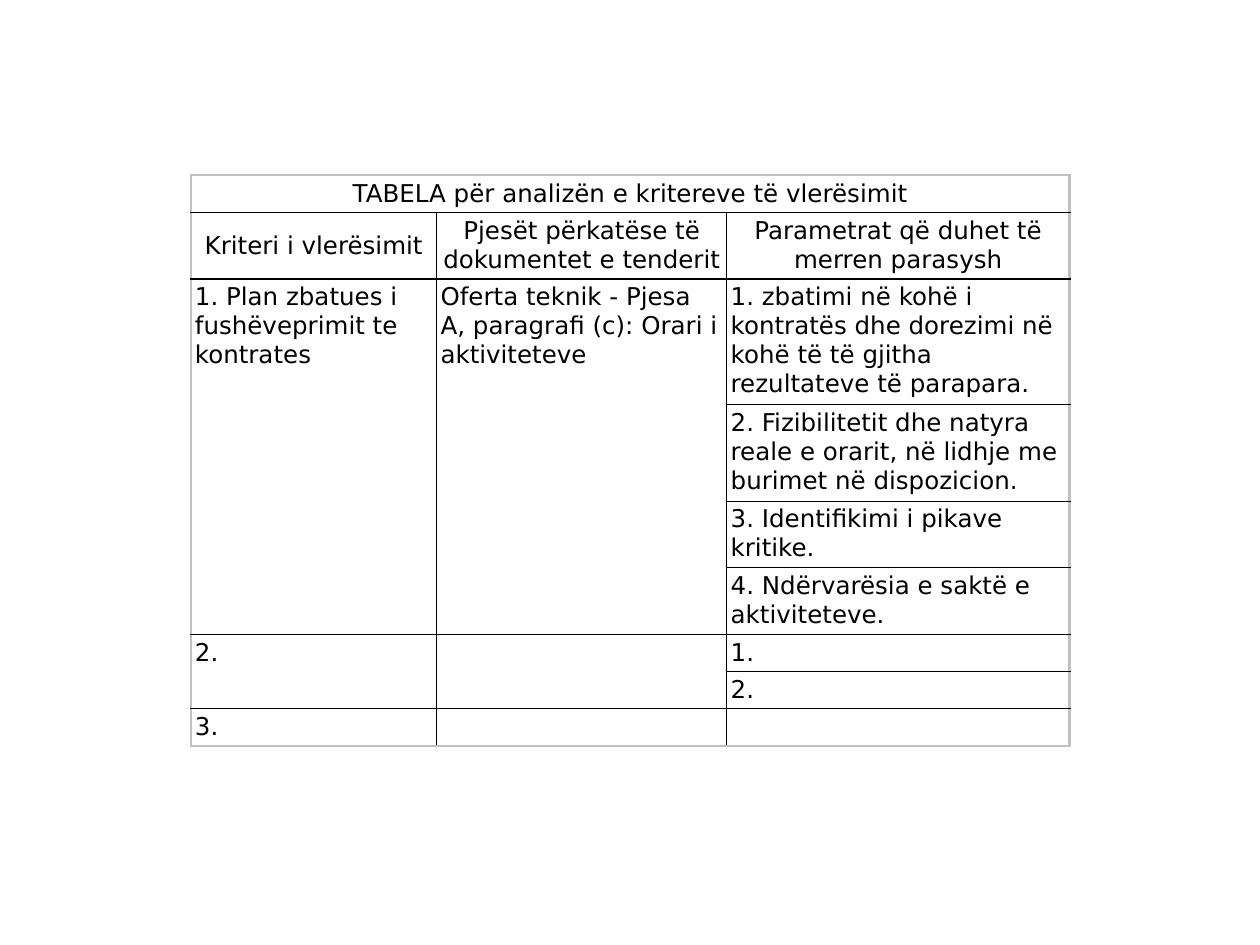
import pptx
import pptx.util
import pptx.dml.color
import pptx.enum.text
import lxml.etree

Pt = pptx.util.Pt
ALIGN = pptx.enum.text.PP_ALIGN
ANCHOR = pptx.enum.text.MSO_ANCHOR
BLACK = pptx.dml.color.RGBColor(0x00, 0x00, 0x00)
WHITE = pptx.dml.color.RGBColor(0xFF, 0xFF, 0xFF)
GRAY = pptx.dml.color.RGBColor(0xC0, 0xC0, 0xC0)
FONT = "DejaVu Sans"
NS = "http://schemas.openxmlformats.org/drawingml/2006/main"

COL_WIDTHS = [140.4, 165.8, 195.8]
ROW_HEIGHTS = [21.2, 38.2, 71.8, 55, 38.2, 38, 21.4, 21.2, 21.2]
ROWS = [
    ["TABELA për analizën e kritereve të vlerësimit", "", ""],
    ["Kriteri i vlerësimit", "Pjesët përkatëse të dokumentet e tenderit",
     "Parametrat që duhet të merren parasysh"],
    ["1. Plan zbatues i fushëveprimit te kontrates",
     "Oferta teknik - Pjesa Α, paragrafi (c): Orari i aktiviteteve",
     "1. zbatimi në kohë i kontratës dhe dorezimi në kohë të të gjitha "
     "rezultateve të parapara."],
    ["", "", "2. Fizibilitetit dhe natyra reale e orarit, në lidhje me "
     "burimet në dispozicion."],
    ["", "", "3. Identifikimi i pikave kritike."],
    ["", "", "4. Ndërvarësia e saktë e aktiviteteve."],
    ["2.", "", "1."],
    ["", "", "2."],
    ["3.", "", ""],
]
MERGES = [(0, 0, 0, 2), (2, 0, 5, 0), (2, 1, 5, 1), (6, 0, 7, 0), (6, 1, 7, 1)]
HEADER_ROWS = 2
FIRST_PARAMETER_ROWS = 6
SECTION_EDGES = {1, 2, 6}


def write_text(tf, text, *, size=14, color=BLACK, align=ALIGN.LEFT):
    p = tf.paragraphs[0]
    p.alignment = align
    if not text:
        p._p.get_or_add_endParaRPr().set("sz", str(size * 100))
        return
    r = p.add_run()
    r.text = text
    r.font.name = FONT
    r.font.size = Pt(size)
    r.font.bold = False
    r.font.color.rgb = color


def add_border(cell, side, color, width):
    tcPr = cell._tc.get_or_add_tcPr()
    ln = lxml.etree.SubElement(tcPr, f"{{{NS}}}ln{side}", w=str(Pt(width)))
    fill = lxml.etree.SubElement(ln, f"{{{NS}}}solidFill")
    lxml.etree.SubElement(fill, f"{{{NS}}}srgbClr", val=str(color))


def find_region(row, col):
    for top, left, bottom, right in MERGES:
        if top <= row <= bottom and left <= col <= right:
            return top, left, bottom, right
    return row, col, row, col


def border_cell(cell, row, col):
    top, left, bottom, right = find_region(row, col)
    origin = (row, col) == (top, left)
    edges = [
        ("L", left, len(COL_WIDTHS), col == left),
        ("R", right + 1, len(COL_WIDTHS), origin or col == right),
        ("T", top, len(ROWS), row == top),
        ("B", bottom + 1, len(ROWS), origin or row == bottom),
    ]
    for side, edge, last, drawn in edges:
        if not drawn:
            continue
        if edge in (0, last):
            add_border(cell, side, GRAY, 1.5)
        elif side in "TB" and edge in SECTION_EDGES:
            add_border(cell, side, BLACK, 1)
        else:
            add_border(cell, side, BLACK, 0.5)


def add_criteria_table(s, left, top, width, height):
    table = s.shapes.add_table(len(ROWS), len(COL_WIDTHS), Pt(left), Pt(top),
                               Pt(width), Pt(height)).table
    table.first_row = False
    table.horz_banding = False
    for column, share in zip(table.columns, COL_WIDTHS):
        column.width = Pt(width * share / sum(COL_WIDTHS))
    for row, share in zip(table.rows, ROW_HEIGHTS):
        row.height = Pt(height * share / sum(ROW_HEIGHTS))
    for r0, c0, r1, c1 in MERGES:
        table.cell(r0, c0).merge(table.cell(r1, c1))
    for i, texts in enumerate(ROWS):
        for j, text in enumerate(texts):
            cell = table.cell(i, j)
            cell.margin_left = cell.margin_right = Pt(2.2)
            cell.margin_top = cell.margin_bottom = Pt(2.2)
            header = i < HEADER_ROWS
            cell.vertical_anchor = ANCHOR.MIDDLE if header else ANCHOR.TOP
            if header:
                align = ALIGN.CENTER
            else:
                align = ALIGN.LEFT if i < FIRST_PARAMETER_ROWS else ALIGN.JUSTIFY
            write_text(cell.text_frame, text, align=align)
            border_cell(cell, i, j)
            cell.fill.solid()
            cell.fill.fore_color.rgb = WHITE


def main():
    prs = pptx.Presentation()
    prs.slide_width, prs.slide_height = Pt(720), Pt(540)
    s = prs.slides.add_slide(prs.slide_layouts[6])
    add_criteria_table(s, 109.2, 100.2, 502, 326.2)
    prs.save("out.pptx")


if __name__ == "__main__":
    main()
